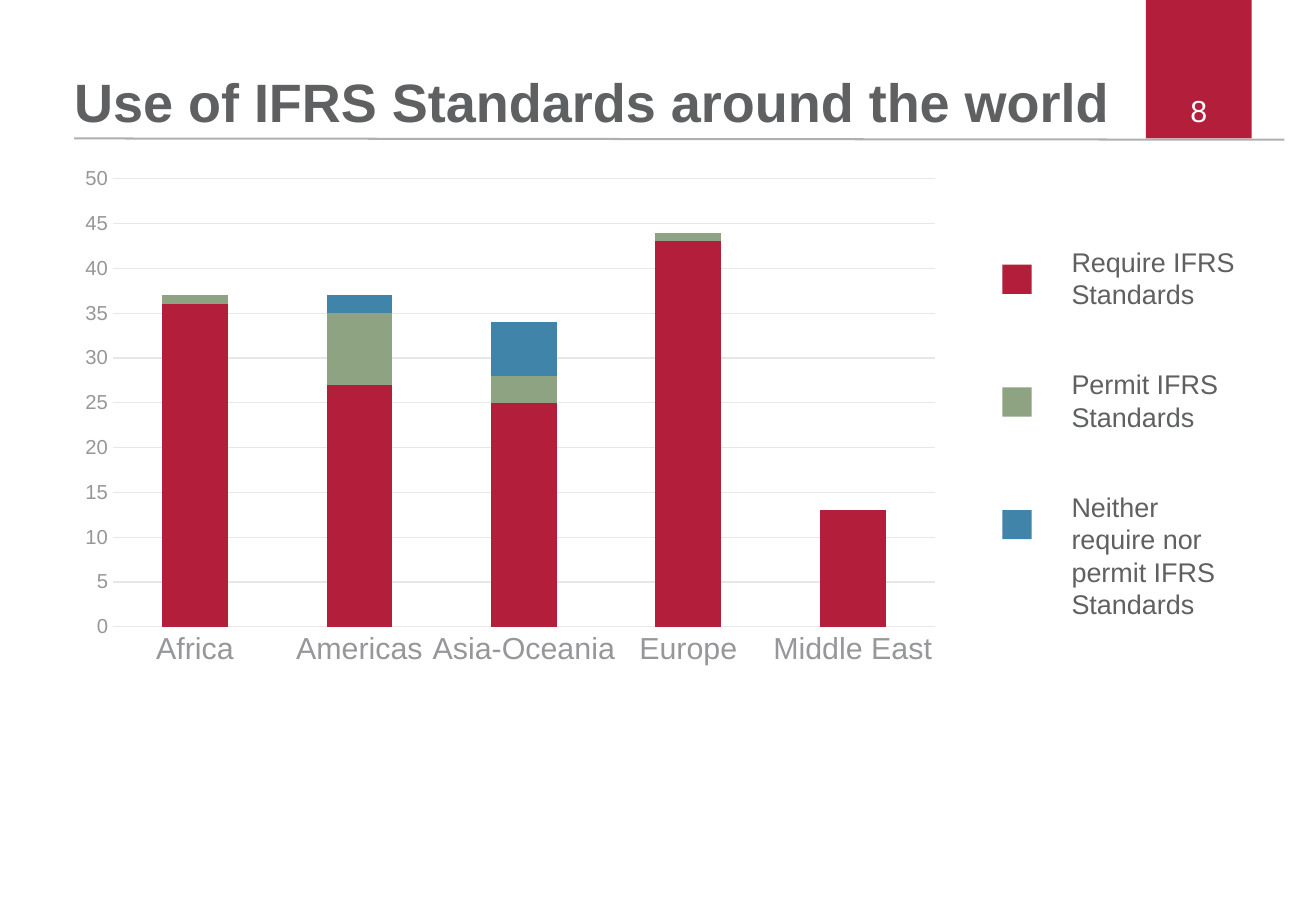
from dataclasses import dataclass
from typing import Any

from lxml import etree
from pptx import Presentation
from pptx import util as u
from pptx.chart import data as chart_data
from pptx.dml.color import RGBColor
from pptx.enum import chart as charts
from pptx.enum import shapes, text
from pptx.oxml import ns


@dataclass(frozen=True)
class Theme:
    font: str = "Arial"
    crimson: str = "B31E3B"
    sage: str = "8DA381"
    blue: str = "4184A9"
    ink: str = "5F6062"
    label: str = "96979A"
    rule: str = "AFAFB0"
    grid: str = "E7E7E8"
    white: str = "FFFFFF"
    title_size: int = 32
    large_size: int = 18
    legend_size: int = 16
    value_size: int = 12
    chart_size: int = 10


@dataclass(frozen=True)
class Group:
    series: str
    caption: str
    color: str
    values: tuple[int | None, ...]
    caption_height: float


THEME = Theme()
REGIONS = ("Africa", "Americas", "Asia-Oceania", "Europe", "Middle East")
GROUPS = (
    Group("Series 1", "Require IFRS Standards", THEME.crimson, (36, 27, 25, 43, 13), 0.64),
    Group("Series 2", "Permit IFRS Standards", THEME.sage, (1, 8, 3, 1, 0), 0.64),
    Group("Series 3", "Neither require nor permit IFRS Standards", THEME.blue,
          (0, 2, 6, 0, None), 1.18),
)
PLOT_LAYOUT = {"layoutTarget": "inner", "xMode": "edge", "yMode": "edge",
               "x": 0.035, "y": 0.029, "w": 0.953, "h": 0.66}
LEGEND_TOP, LEGEND_STEP = 1.97, 1.01


def assign(target: Any, values: dict[str, Any]) -> None:
    for name, value in values.items():
        setattr(target, name, value)


def inches(*lengths: float) -> list[u.Length]:
    return [u.Inches(length) for length in lengths]


def format_font(font: Any, size: int, color: str, bold: bool = False) -> None:
    assign(font, {"name": THEME.font, "size": u.Pt(size), "bold": bold})
    font.color.rgb = RGBColor.from_string(color)


def format_line(line: Any, color: str, width: float) -> None:
    line.color.rgb = RGBColor.from_string(color)
    line.width = u.Pt(width)


def add_block(page: Any, left: float, top: float, width: float, height: float,
              color: str) -> None:
    block = page.shapes.add_shape(shapes.MSO_SHAPE.RECTANGLE,
                                  *inches(left, top, width, height))
    block.shadow.inherit = False
    block.fill.solid()
    block.fill.fore_color.rgb = RGBColor.from_string(color)
    block.line.fill.background()


def add_label(page: Any, left: float, top: float, width: float, height: float, words: str,
              size: int, color: str, frame_format: dict[str, Any],
              align: text.PP_ALIGN = text.PP_ALIGN.LEFT) -> None:
    box = page.shapes.add_textbox(*inches(left, top, width, height))
    assign(box.text_frame, {"word_wrap": True, **frame_format})
    para = box.text_frame.paragraphs[0]
    para.alignment = align
    span = para.add_run()
    span.text = words
    format_font(span.font, size, color)


def add_header(page: Any) -> None:
    add_block(page, 9.43, 0, 0.87, 1.14, THEME.crimson)
    rule = page.shapes.add_connector(shapes.MSO_CONNECTOR.STRAIGHT,
                                     *inches(0.61, 1.14, 10.57, 1.15))
    format_line(rule.line, THEME.rule, 1.2)
    etree.SubElement(rule.element.spPr, ns.qn("a:effectLst"))
    add_label(page, 9.43, 0.71, 0.87, 0.4, "8", THEME.large_size, THEME.white,
              {"vertical_anchor": text.MSO_ANCHOR.MIDDLE}, text.PP_ALIGN.CENTER)


def format_title(title: Any) -> None:
    left, top, width, height = inches(0.61, 0.03, 8.66, 1.07)
    assign(title, {"left": left, "top": top, "width": width, "height": height})
    frame = title.text_frame
    frame.text = "Use of IFRS Standards around the world"
    assign(frame, {"margin_left": 0, "margin_right": 0, "margin_top": 0, "margin_bottom": 0,
                   "word_wrap": True, "auto_size": text.MSO_AUTO_SIZE.NONE,
                   "vertical_anchor": text.MSO_ANCHOR.BOTTOM})
    para = frame.paragraphs[0]
    para.alignment = text.PP_ALIGN.LEFT
    format_font(para.runs[0].font, THEME.title_size, THEME.ink, bold=True)


def place_plot(chart: Any) -> None:
    area = chart.element.find(".//" + ns.qn("c:plotArea"))
    for old in area.findall(ns.qn("c:layout")):
        area.remove(old)
    layout = etree.Element(ns.qn("c:layout"))
    manual = etree.SubElement(layout, ns.qn("c:manualLayout"))
    for name, value in PLOT_LAYOUT.items():
        etree.SubElement(manual, ns.qn(f"c:{name}")).set("val", str(value))
    area.insert(0, layout)


def add_region_chart(page: Any) -> None:
    data = chart_data.CategoryChartData()
    data.categories = REGIONS
    for group in GROUPS:
        data.add_series(group.series, group.values)
    chart = page.shapes.add_chart(charts.XL_CHART_TYPE.COLUMN_STACKED,
                                  *inches(0.68, 1.31, 7.1, 5.59), data).chart
    assign(chart, {"has_legend": False, "has_title": False})
    format_font(chart.font, THEME.chart_size, THEME.ink)
    plot = chart.plots[0]
    assign(plot, {"gap_width": 150, "overlap": 100, "vary_by_categories": False})
    for series, group in zip(plot.series, GROUPS):
        series.format.fill.solid()
        series.format.fill.fore_color.rgb = RGBColor.from_string(group.color)

    regions, counts = chart.category_axis, chart.value_axis
    for axis, size in ((regions, THEME.large_size), (counts, THEME.value_size)):
        assign(axis, {"major_tick_mark": charts.XL_TICK_MARK.NONE,
                      "minor_tick_mark": charts.XL_TICK_MARK.NONE})
        format_font(axis.tick_labels.font, size, THEME.label)
    assign(counts, {"minimum_scale": 0, "maximum_scale": 50, "major_unit": 5,
                    "has_major_gridlines": True})
    counts.format.line.fill.background()
    for line in (regions.format.line, counts.major_gridlines.format.line):
        format_line(line, THEME.grid, 0.75)
    place_plot(chart)


def add_legend(page: Any) -> None:
    for index, group in enumerate(GROUPS):
        top = LEGEND_TOP + index * LEGEND_STEP
        add_block(page, 8.25, top + 0.21, 0.24, 0.24, group.color)
        add_label(page, 8.72, top, 1.57, group.caption_height, group.caption,
                  THEME.legend_size, THEME.ink,
                  {"auto_size": text.MSO_AUTO_SIZE.SHAPE_TO_FIT_TEXT})


def main() -> None:
    deck = Presentation()
    assign(deck, {"slide_width": u.Inches(10.83), "slide_height": u.Inches(7.5)})
    page = deck.slides.add_slide(deck.slide_layouts[5])
    format_title(page.shapes.title)
    add_header(page)
    add_region_chart(page)
    add_legend(page)
    deck.save("out.pptx")


if __name__ == "__main__":
    main()
